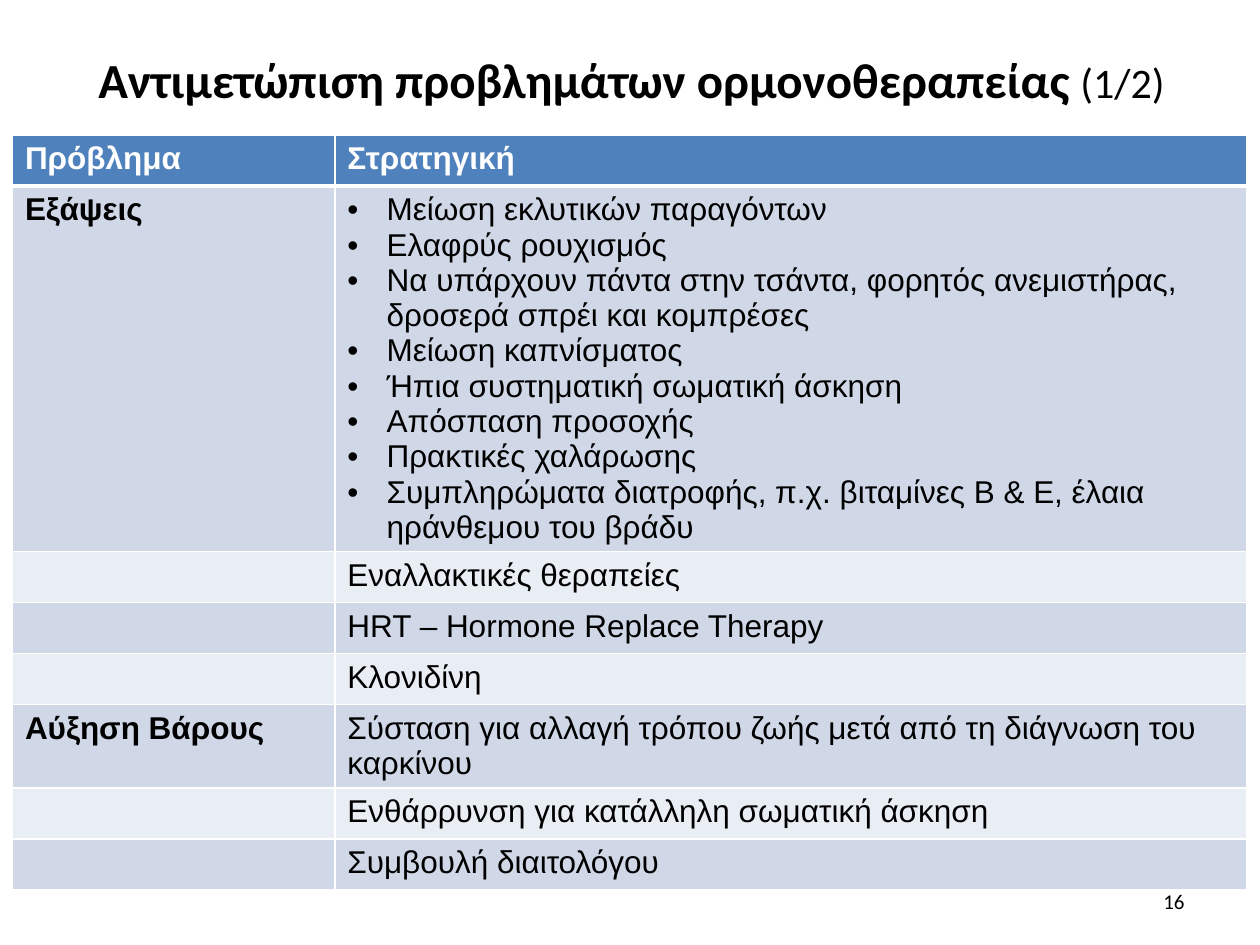
from lxml.etree import SubElement as Sub
from pptx import Presentation
from pptx.dml.color import RGBColor
from pptx.enum.text import MSO_ANCHOR as Anchor, PP_ALIGN as Align
from pptx.oxml.ns import qn
from pptx.util import Cm, Pt

BLACK = RGBColor(0x00, 0x00, 0x00)
WHITE = RGBColor(0xFF, 0xFF, 0xFF)
BLUE = RGBColor(0x4F, 0x81, 0xBD)
DARK = RGBColor(0xD0, 0xD8, 0xE8)
LIGHT = RGBColor(0xE9, 0xED, 0xF4)

HEAD = ("Πρόβλημα", "Στρατηγική")
TIPS = [
    "Μείωση εκλυτικών παραγόντων",
    "Ελαφρύς ρουχισμός",
    "Να υπάρχουν πάντα στην τσάντα, φορητός ανεμιστήρας, δροσερά σπρέι και κομπρέσες",
    "Μείωση καπνίσματος",
    "Ήπια συστηματική σωματική άσκηση",
    "Απόσπαση προσοχής",
    "Πρακτικές χαλάρωσης",
    "Συμπληρώματα διατροφής, π.χ. βιταμίνες Β & Ε, έλαια ηράνθεμου του βράδυ",
]
ROWS = [
    HEAD,
    ("Εξάψεις", TIPS),
    ("", "Εναλλακτικές θεραπείες"),
    ("", "HRT – Hormone Replace Therapy"),
    ("", "Κλονιδίνη"),
    ("Αύξηση Βάρους", "Σύσταση για αλλαγή τρόπου ζωής μετά από τη διάγνωση του καρκίνου"),
    ("", "Ενθάρρυνση για κατάλληλη σωματική άσκηση"),
    ("", "Συμβουλή διαιτολόγου"),
]
WIDTHS = (6.5, 18.39)
ROW = 1.03


def add_run(para, text, size, face, color=BLACK, bold=False):
    run = para.add_run()
    run.text = text
    font = run.font
    font.size, font.name, font.bold = Pt(size), face, bold
    font.color.rgb = color


def add_bullet(para):
    props = para._p.get_or_add_pPr()
    props.set("marL", str(Cm(0.79)))
    props.set("indent", str(-Cm(0.79)))
    Sub(props, qn("a:buFont"), typeface="Arial")
    Sub(props, qn("a:buChar"), char="•")


def add_edges(cell, base):
    props = cell._tc.get_or_add_tcPr()
    for side, width in zip("LRTB", (1, 1, 1, base)):
        line = Sub(props, qn(f"a:ln{side}"), w=str(Pt(width)))
        fill = Sub(line, qn("a:solidFill"))
        Sub(fill, qn("a:srgbClr"), val=str(WHITE))


def fill_cell(cell, text, color, ink, bold, base):
    add_edges(cell, base)
    cell.fill.solid()
    cell.fill.fore_color.rgb = color
    listed = isinstance(text, list)
    frame = cell.text_frame
    for i, item in enumerate(text if listed else [text]):
        para = frame.add_paragraph() if i else frame.paragraphs[0]
        if listed:
            add_bullet(para)
        if item:
            add_run(para, item, 18, "Arial", ink, bold)


def add_grid(slide):
    frame = slide.shapes.add_table(
        len(ROWS), len(WIDTHS), Cm(0.25), Cm(2.72), Cm(sum(WIDTHS)), Cm(ROW * len(ROWS))
    )
    table = frame.table
    for col, width in zip(table.columns, WIDTHS):
        col.width = Cm(width)
    for i, row in enumerate(ROWS):
        top = i == 0
        color = BLUE if top else DARK if i % 2 else LIGHT
        for j, text in enumerate(row):
            fill_cell(
                table.cell(i, j), text, color,
                WHITE if top else BLACK, top or j == 0, 3 if top else 1,
            )


def set_title(slide):
    title = slide.shapes.title
    title.left, title.top = Cm(1.3), Cm(0.33)
    title.width, title.height = Cm(22.86), Cm(2.51)
    frame = title.text_frame
    frame.vertical_anchor = Anchor.MIDDLE
    para = frame.paragraphs[0]
    para.alignment = Align.CENTER
    add_run(para, "Αντιμετώπιση προβλημάτων ορμονοθεραπείας ", 28, "Calibri", bold=True)
    add_run(para, "(1/2)", 24, "Calibri")


def add_number(slide):
    box = slide.shapes.add_textbox(Cm(18.21), Cm(17.65), Cm(5.92), Cm(1.02))
    frame = box.text_frame
    frame.word_wrap = True
    frame.vertical_anchor = Anchor.MIDDLE
    para = frame.paragraphs[0]
    para.alignment = Align.RIGHT
    add_run(para, "16", 12, "Calibri")


def main():
    deck = Presentation()
    deck.slide_width, deck.slide_height = Cm(25.4), Cm(19.05)
    slide = deck.slides.add_slide(deck.slide_layouts[5])
    set_title(slide)
    add_grid(slide)
    add_number(slide)
    deck.save("out.pptx")


if __name__ == "__main__":
    main()
